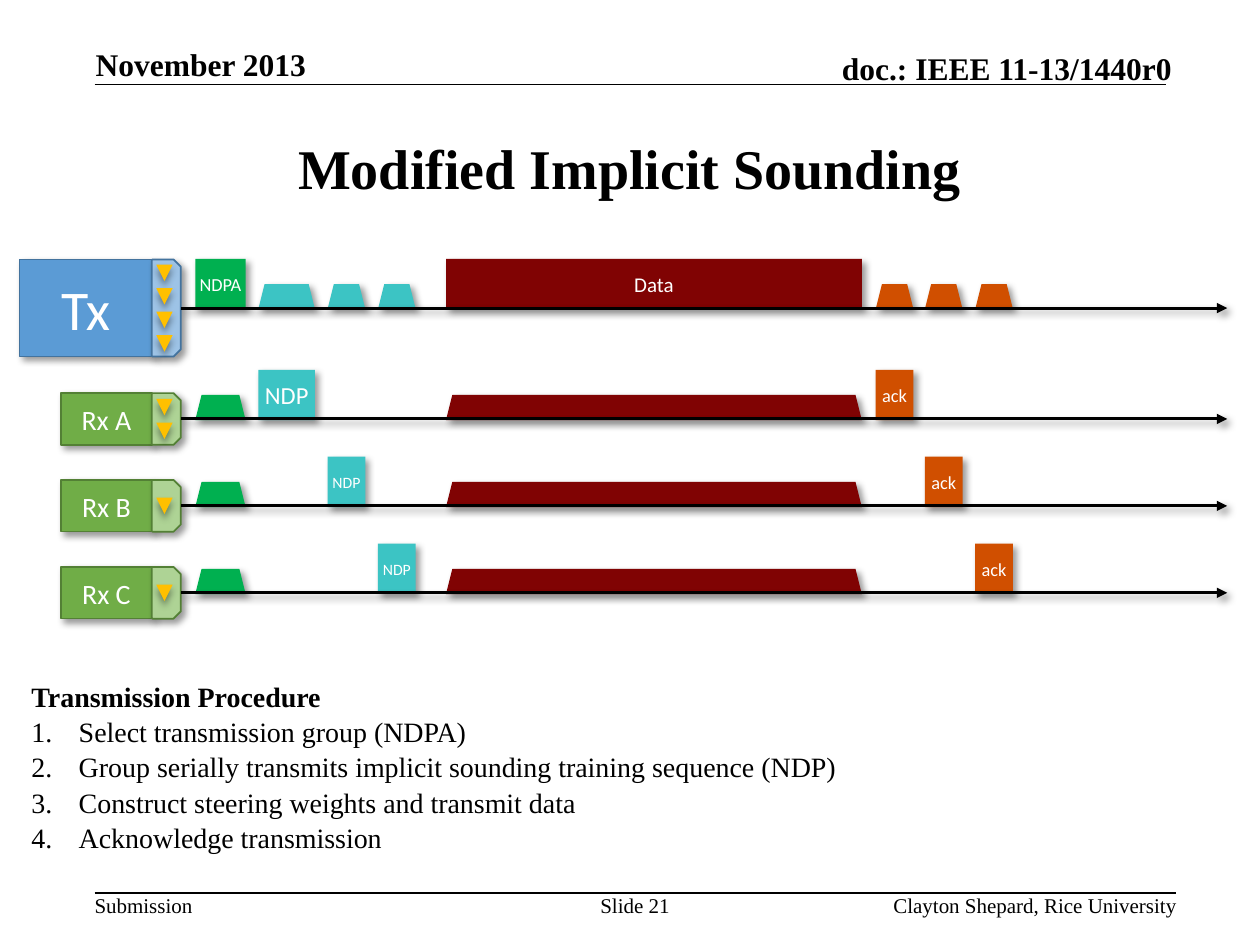
"""Builds the slide on modified implicit sounding on a grid of 100 columns by 75 rows."""
from typing import NamedTuple

from lxml import etree
from pptx import Presentation
from pptx import util as u
from pptx.dml.color import RGBColor
from pptx.enum import shapes, text
from pptx.oxml.ns import qn

BLACK = RGBColor(0x00, 0x00, 0x00)
WHITE = RGBColor(0xFF, 0xFF, 0xFF)
GREEN = RGBColor(0x00, 0xB0, 0x50)
TEAL = RGBColor(0x3C, 0xC4, 0xC4)
MAROON = RGBColor(0x80, 0x03, 0x03)
ORANGE = RGBColor(0xD0, 0x4F, 0x00)
AMBER = RGBColor(0xFF, 0xC0, 0x00)
TX_FILL = RGBColor(0x5B, 0x9B, 0xD5)
TX_LIGHT = RGBColor(0x9D, 0xC3, 0xE6)
TX_EDGE = RGBColor(0x43, 0x73, 0x9E)
RX_FILL = RGBColor(0x70, 0xAD, 0x47)
RX_LIGHT = RGBColor(0xAE, 0xD3, 0x95)
RX_EDGE = RGBColor(0x53, 0x80, 0x35)

SERIF, SANS = "Times New Roman", "Calibri"
COLUMNS, ROWS = 100, 75
SENT_HEIGHT, HEARD_HEIGHT = 4, 2
TX_BASE, RX_BASE, RX_PITCH = 24.55, 33.35, 6.9
AXIS_LIFT = 0.1
BODY_RIGHT, CAP_DEPTH = 12.05, 2.3
ANTENNA_SIZE, ANTENNA_PITCH = 1.3, 1.87

Kind, Align, Anchor = shapes.MSO_SHAPE, text.PP_ALIGN, text.MSO_ANCHOR


class Node(NamedTuple):
    label: str
    base: float
    width: float
    height: float
    size: float
    antennas: int
    fill: RGBColor
    light: RGBColor
    edge: RGBColor


class Burst(NamedTuple):
    label: str
    left: float
    width: float
    color: RGBColor
    size: float
    sender: int
    listeners: tuple[int, ...]


class Caption(NamedTuple):
    label: str
    box: tuple[float, float, float, float]
    size: float
    bold: bool
    align: Align
    anchor: Anchor


RECEIVERS = [("Rx A", 2), ("Rx B", 1), ("Rx C", 1)]
NODES = [Node("Tx", TX_BASE, 10.5, 7.7, 32, 4, TX_FILL, TX_LIGHT, TX_EDGE)] + [
    Node(label, RX_BASE + index * RX_PITCH, 7.2, 4.1, 16, antennas, RX_FILL, RX_LIGHT, RX_EDGE)
    for index, (label, antennas) in enumerate(RECEIVERS)
]
BURSTS = [
    Burst("NDPA", 15.5, 4, GREEN, 10.5, 0, (1, 2, 3)),
    Burst("NDP", 20.5, 4.5, TEAL, 14, 1, (0,)),
    Burst("NDP", 26, 3, TEAL, 9, 2, (0,)),
    Burst("NDP", 30, 3, TEAL, 9, 3, (0,)),
    Burst("Data", 35.4, 33, MAROON, 12, 0, (1, 2, 3)),
    Burst("ack", 69.5, 3, ORANGE, 10.5, 1, (0,)),
    Burst("ack", 73.4, 3, ORANGE, 10.5, 2, (0,)),
    Burst("ack", 77.4, 3, ORANGE, 10.5, 3, (0,)),
]
CAPTIONS = [
    Caption("November 2013", (7.6, 3.6, 20.5, 3), 18, True, Align.LEFT, Anchor.BOTTOM),
    Caption("doc.: IEEE 11-13/1440r0", (54.7, 3.9, 38.3, 3), 18, True, Align.RIGHT, Anchor.BOTTOM),
    Caption("Submission", (7.5, 70.8, 7.8, 2), 12, False, Align.LEFT, Anchor.TOP),
    Caption("Slide 21", (47.5, 70.8, 5.8, 4), 12, False, Align.CENTER, Anchor.TOP),
    Caption("Clayton Shepard, Rice University", (58.6, 70.8, 34.8, 2), 12, False, Align.RIGHT, Anchor.TOP),
]
STEPS = [
    "Select transmission group (NDPA)",
    "Group serially transmits implicit sounding training sequence (NDP)",
    "Construct steering weights and transmit data",
    "Acknowledge transmission",
]

presentation = Presentation()
presentation.slide_width, presentation.slide_height = u.Inches(10), u.Inches(7.5)
slide = presentation.slides.add_slide(presentation.slide_layouts[5])


def across(columns: float) -> int:
    """Length of a number of grid columns."""
    return round(presentation.slide_width * columns / COLUMNS)


def down(rows: float) -> int:
    """Length of a number of grid rows."""
    return round(presentation.slide_height * rows / ROWS)


def place(left: float, top: float, width: float, height: float) -> tuple[int, ...]:
    """Convert a grid box to slide lengths."""
    return across(left), down(top), across(width), down(height)


def style(paragraph, font: str, size: float, color: RGBColor, bold: bool = False) -> None:
    """Format every run of a paragraph."""
    for run in paragraph.runs:
        run.font.name, run.font.size, run.font.bold = font, u.Pt(size), bold
        run.font.color.rgb = color


def clear_margins(frame) -> None:
    """Remove the inner margins of a text frame."""
    frame.margin_left = frame.margin_right = frame.margin_top = frame.margin_bottom = 0


def add_shadow(effects, degrees: int) -> None:
    """Add a soft black shadow to an effect list."""
    shadow = etree.SubElement(effects, qn("a:outerShdw"), blurRad=str(u.Pt(4)), dist=str(u.Pt(3)),
                              dir=str(degrees * 60000), algn="tl", rotWithShape="0")
    color = etree.SubElement(shadow, qn("a:srgbClr"), val=str(BLACK))
    etree.SubElement(color, qn("a:alpha"), val="40000")


def add_block(parent, kind: Kind, box: tuple[float, ...], fill: RGBColor,
              edge: RGBColor | None = None, degrees: int = 45):
    """Draw a filled shape with a shadow."""
    shape = parent.shapes.add_shape(kind, *place(*box))
    shape.fill.solid()
    shape.fill.fore_color.rgb = fill
    if edge is None:
        shape.line.fill.background()
    else:
        shape.line.color.rgb, shape.line.width = edge, u.Pt(1)
    shape.shadow.inherit = False
    add_shadow(shape._element.spPr.find(qn("a:effectLst")), degrees)
    return shape


def add_label(shape, label: str, size: float) -> None:
    """Centre a white label in a shape."""
    frame = shape.text_frame
    clear_margins(frame)
    frame.text, frame.vertical_anchor = label, Anchor.MIDDLE
    frame.paragraphs[0].alignment = Align.CENTER
    style(frame.paragraphs[0], SANS, size, WHITE)


def add_line(left: float, right: float, row: float, width: float, arrow: bool = False) -> None:
    """Draw a horizontal rule, or a time axis with an arrowhead and a shadow."""
    line = slide.shapes.add_connector(shapes.MSO_CONNECTOR.STRAIGHT, across(left), down(row),
                                      across(right), down(row))
    line.line.color.rgb, line.line.width = BLACK, u.Pt(width)
    if arrow:
        etree.SubElement(line.line._get_or_add_ln(), qn("a:tailEnd"), type="triangle")
    effects = etree.SubElement(line._element.spPr, qn("a:effectLst"))
    if arrow:
        add_shadow(effects, 45)


def add_burst(burst: Burst) -> None:
    """Draw a burst as a box at its sender and as a trapezoid at each listener."""
    for lane in burst.listeners:
        add_block(slide, Kind.TRAPEZOID, (burst.left, NODES[lane].base - HEARD_HEIGHT, burst.width, HEARD_HEIGHT),
                  burst.color)
    box = (burst.left, NODES[burst.sender].base - SENT_HEIGHT, burst.width, SENT_HEIGHT)
    add_label(add_block(slide, Kind.RECTANGLE, box, burst.color), burst.label, burst.size)


def add_node(node: Node) -> None:
    """Draw a station with its cap and antennas, centred on its time axis."""
    group = slide.shapes.add_group_shape()
    middle = node.base - AXIS_LIFT
    center = BODY_RIGHT + CAP_DEPTH / 2
    body = add_block(group, Kind.RECTANGLE,
                     (BODY_RIGHT - node.width, middle - node.height / 2, node.width, node.height),
                     node.fill, node.edge)
    add_label(body, node.label, node.size)
    cap = add_block(group, Kind.SNIP_2_SAME_RECTANGLE,
                    (center - node.height / 2, middle - CAP_DEPTH / 2, node.height, CAP_DEPTH),
                    node.light, node.edge)
    cap.rotation, cap.adjustments[0], cap.adjustments[1] = 90, 0.25, 0.02
    for index in range(node.antennas):
        row = middle + (index - (node.antennas - 1) / 2) * ANTENNA_PITCH
        antenna = add_block(group, Kind.ISOSCELES_TRIANGLE,
                            (center - 0.15 - ANTENNA_SIZE / 2, row - ANTENNA_SIZE / 2, ANTENNA_SIZE, ANTENNA_SIZE),
                            AMBER, degrees=90)
        antenna.rotation = 180


def add_caption(caption: Caption) -> None:
    """Write one header or footer text."""
    frame = slide.shapes.add_textbox(*place(*caption.box)).text_frame
    clear_margins(frame)
    frame.word_wrap, frame.vertical_anchor, frame.text = True, caption.anchor, caption.label
    frame.paragraphs[0].alignment = caption.align
    style(frame.paragraphs[0], SERIF, caption.size, BLACK, caption.bold)


def add_procedure() -> None:
    """Write the heading and the numbered steps."""
    frame = slide.shapes.add_textbox(*place(2.5, 52.6, 94.4, 14.8)).text_frame
    clear_margins(frame)
    frame.word_wrap, frame.text = True, "Transmission Procedure"
    frame.paragraphs[0].line_spacing = 1.5
    style(frame.paragraphs[0], SERIF, 16, BLACK, True)
    for step in STEPS:
        paragraph = frame.add_paragraph()
        paragraph.text, paragraph.line_spacing = step, 1.05
        properties = paragraph._p.get_or_add_pPr()
        properties.set("marL", str(across(3.75)))
        properties.set("indent", str(-across(3.75)))
        etree.SubElement(properties, qn("a:buAutoNum"), type="arabicPeriod")
        style(paragraph, SERIF, 16, BLACK)


def main() -> None:
    """Draw the slide and save it."""
    title = slide.shapes.title
    title.left, title.top, title.width, title.height = place(7.5, 7.5, 85, 11.6)
    title.text_frame.text = "Modified Implicit Sounding"
    title.text_frame.vertical_anchor = Anchor.MIDDLE
    title.text_frame.paragraphs[0].alignment = Align.CENTER
    style(title.text_frame.paragraphs[0], SERIF, 32, BLACK, True)
    add_line(7.5, 92.5, 6.7, 1)
    add_line(7.5, 93.3, 70.85, 1)
    for caption in CAPTIONS:
        add_caption(caption)
    for burst in BURSTS:
        add_burst(burst)
    for node in NODES:
        add_node(node)
        add_line(14.4, 97.4, node.base - AXIS_LIFT, 1.75, arrow=True)
    add_procedure()
    presentation.save("out.pptx")


if __name__ == "__main__":
    main()
